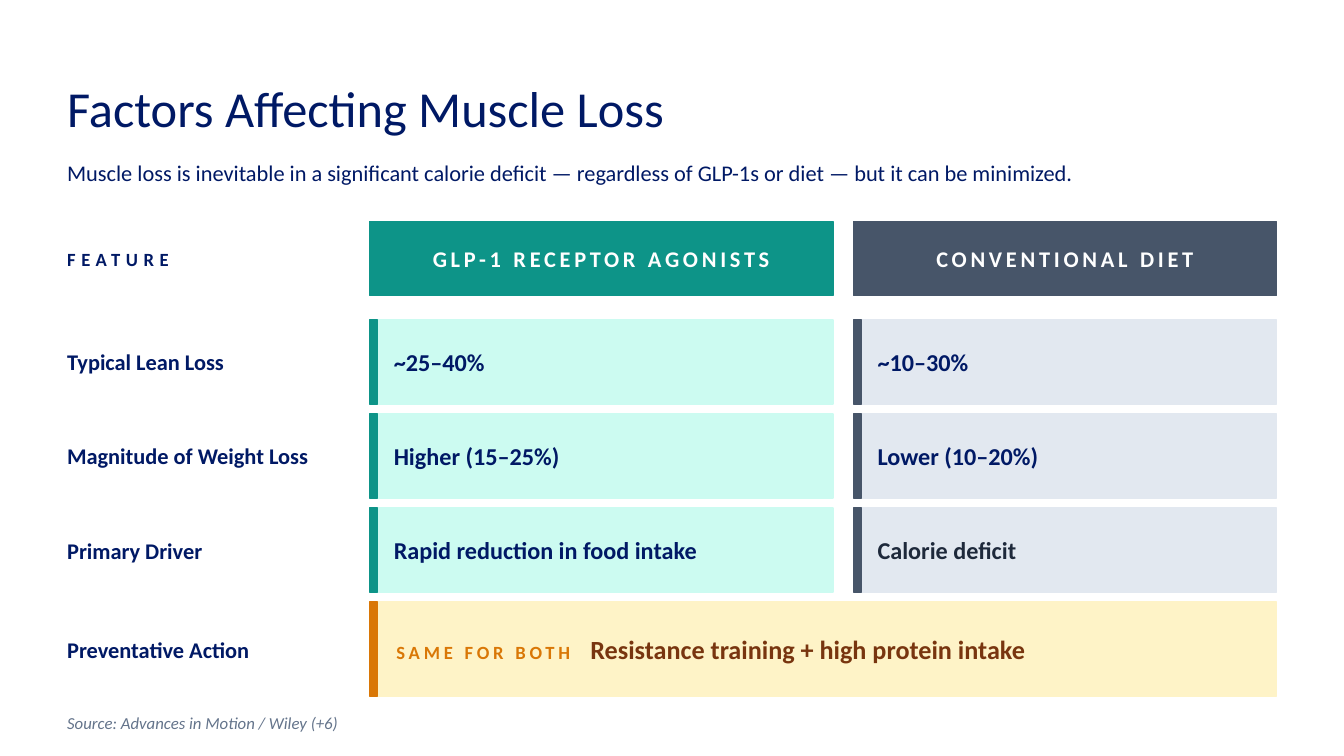
from collections import namedtuple
from dataclasses import dataclass

from pptx import Presentation
from pptx import util as u
from pptx.dml.color import RGBColor
from pptx.enum import shapes, text

COLUMNS, ROWS = 200, 112.5
UNIT = u.Inches(1) / 15

Box = namedtuple("Box", "left top width height")
Side = namedtuple("Side", "strong pale")
Run = namedtuple("Run", "words size color bold italic spacing", defaults=(False, False, 0))


@dataclass(frozen=True)
class Theme:
    font: str = "Calibri"
    navy: str = "001965"
    ink: str = "1E293B"
    white: str = "FFFFFF"
    muted: str = "64748B"
    brown: str = "78350F"
    drug: Side = Side("0D9488", "CCFBF1")
    diet: Side = Side("475569", "E2E8F0")
    shared: Side = Side("D97706", "FEF3C7")
    title: float = 36
    body: float = 16
    value: float = 17.3
    action: float = 18.7
    tag: float = 13.3
    source: float = 12
    tag_spacing: float = 2.7
    feature_spacing: float = 4
    tag_gap: float = 8.4


THEME = Theme()
LABEL_LEFT, LABEL_WIDTH = 10, 42
DRUG_LEFT, DRUG_WIDTH = 55, 69
DIET_LEFT, DIET_WIDTH = 127, 63
FULL_WIDTH = 180
HEADER_TOP, HEADER_HEIGHT = 33, 11
BODY_TOP, ROW_PITCH, ROW_HEIGHT = 47.6, 14, 12.5
ACTION_HEIGHT = 14
ACCENT_WIDTH = 1.2

COMPARISON = [
    ("Typical Lean Loss", "~25–40%", "~10–30%", THEME.navy),
    ("Magnitude of Weight Loss", "Higher (15–25%)", "Lower (10–20%)", THEME.navy),
    ("Primary Driver", "Rapid reduction in food intake", "Calorie deficit", THEME.ink),
]


def emu(box):
    return [u.Emu(round(length * UNIT)) for length in box]


def write(shape, runs, align=text.PP_ALIGN.LEFT, inset=0):
    frame = shape.text_frame
    frame.word_wrap = True
    frame.vertical_anchor = text.MSO_ANCHOR.MIDDLE
    frame.margin_left = u.Emu(round(inset * UNIT))
    frame.margin_right = frame.margin_top = frame.margin_bottom = 0
    paragraph = frame.paragraphs[0]
    paragraph.alignment = align
    for part in runs:
        run = paragraph.add_run()
        run.text = part.words
        run.font.name = THEME.font
        run.font.size = u.Pt(part.size)
        run.font.bold = part.bold
        run.font.italic = part.italic
        run.font.color.rgb = RGBColor.from_string(part.color)
        if part.spacing:
            run.font._element.set("spc", str(round(part.spacing * 100)))


def add_text(slide, box, run):
    write(slide.shapes.add_textbox(*emu(box)), [run])


def add_block(slide, box, color):
    block = slide.shapes.add_shape(shapes.MSO_SHAPE.RECTANGLE, *emu(box))
    block.shadow.inherit = False
    block.fill.solid()
    block.fill.fore_color.rgb = RGBColor.from_string(color)
    block.line.color.rgb = RGBColor.from_string(color)
    block.line.width = u.Pt(1)
    return block


def add_header(slide, box, words, side):
    heading = Run(words, THEME.body, THEME.white, True, spacing=THEME.tag_spacing)
    write(add_block(slide, box, side.strong), [heading], text.PP_ALIGN.CENTER)


def add_panel(slide, box, side, runs, inset=3.6):
    write(add_block(slide, box, side.pale), runs, inset=inset)
    add_block(slide, box._replace(width=ACCENT_WIDTH), side.strong)


def add_label(slide, top, height, words):
    add_text(slide, Box(LABEL_LEFT, top, LABEL_WIDTH, height),
             Run(words, THEME.body, THEME.navy, True))


def add_intro(slide, box):
    add_text(slide, box._replace(height=11),
             Run("Factors Affecting Muscle Loss", THEME.title, THEME.navy))
    add_text(slide, box._replace(top=box.top + 11.2, height=8),
             Run("Muscle loss is inevitable in a significant calorie deficit — regardless "
                 "of GLP-1s or diet — but it can be minimized.", THEME.body, THEME.navy))


def add_headers(slide, top, height):
    add_text(slide, Box(LABEL_LEFT, top, LABEL_WIDTH, height),
             Run("FEATURE", THEME.tag, THEME.navy, True, spacing=THEME.feature_spacing))
    add_header(slide, Box(DRUG_LEFT, top, DRUG_WIDTH, height),
               "GLP-1 RECEPTOR AGONISTS", THEME.drug)
    add_header(slide, Box(DIET_LEFT, top, DIET_WIDTH, height),
               "CONVENTIONAL DIET", THEME.diet)


def add_comparison_row(slide, top, height, feature, drug, diet, diet_color):
    add_label(slide, top, height, feature)
    add_panel(slide, Box(DRUG_LEFT, top, DRUG_WIDTH, height), THEME.drug,
              [Run(drug, THEME.value, THEME.navy, True)])
    add_panel(slide, Box(DIET_LEFT, top, DIET_WIDTH, height), THEME.diet,
              [Run(diet, THEME.value, diet_color, True)])


def add_action_row(slide, top, height):
    add_label(slide, top, height, "Preventative Action")
    amber = THEME.shared.strong
    width = DIET_LEFT + DIET_WIDTH - DRUG_LEFT
    add_panel(slide, Box(DRUG_LEFT, top, width, height), THEME.shared, [
        Run("SAME FOR BOTH", THEME.tag, amber, True, spacing=THEME.tag_spacing),
        Run(" ", THEME.tag, amber, True, spacing=THEME.tag_gap),
        Run("Resistance training + high protein intake", THEME.action, THEME.brown, True),
    ], inset=4)


def add_source(slide, box):
    add_text(slide, box, Run("Source: Advances in Motion / Wiley (+6)",
                             THEME.source, THEME.muted, italic=True))


def main():
    deck = Presentation()
    deck.slide_width, deck.slide_height = emu((COLUMNS, ROWS))
    slide = deck.slides.add_slide(deck.slide_layouts[6])
    slide.background.fill.solid()
    slide.background.fill.fore_color.rgb = RGBColor.from_string(THEME.white)

    add_intro(slide, Box(LABEL_LEFT, 10.4, FULL_WIDTH, 19.2))
    add_headers(slide, HEADER_TOP, HEADER_HEIGHT)
    for index, row in enumerate(COMPARISON):
        add_comparison_row(slide, BODY_TOP + index * ROW_PITCH, ROW_HEIGHT, *row)
    add_action_row(slide, BODY_TOP + len(COMPARISON) * ROW_PITCH, ACTION_HEIGHT)
    add_source(slide, Box(LABEL_LEFT, 105, FULL_WIDTH, 5))
    deck.save("out.pptx")


if __name__ == "__main__":
    main()
